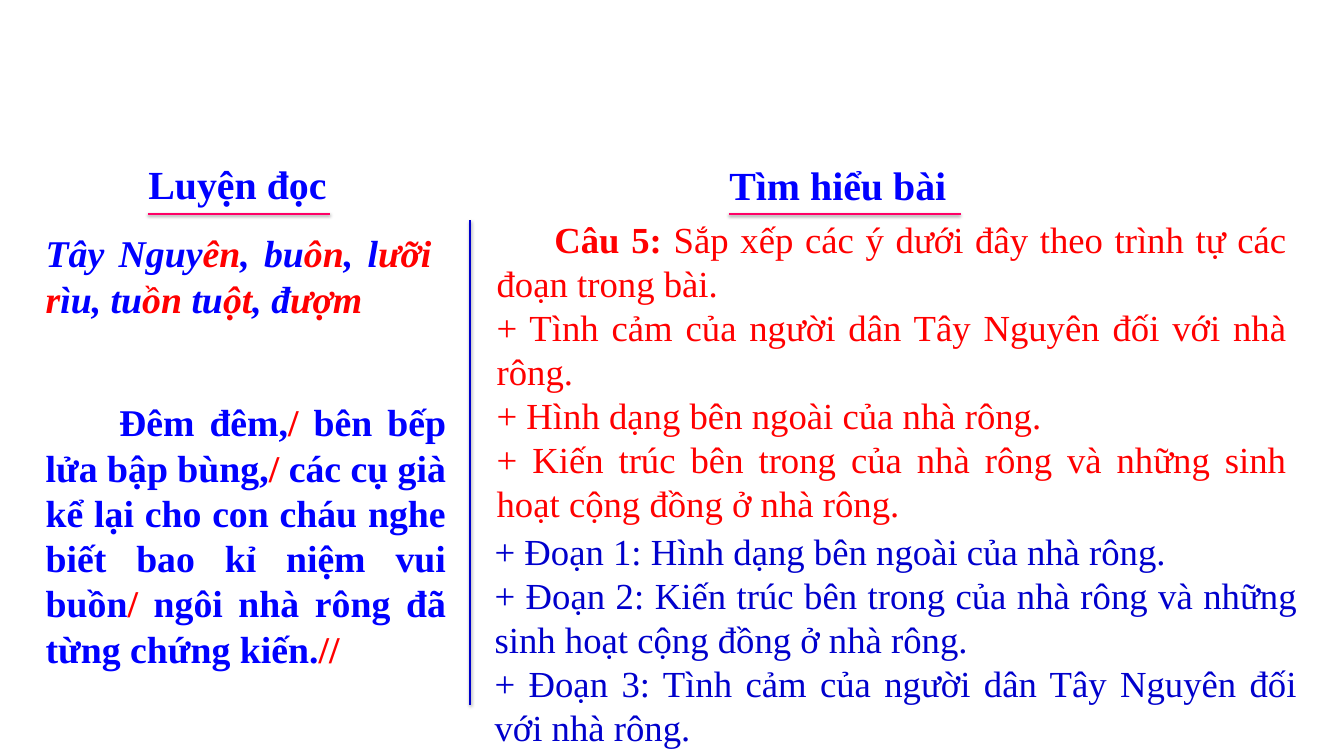
from itertools import cycle

from lxml.etree import SubElement
from pptx import Presentation
from pptx.dml.color import RGBColor
from pptx.enum.shapes import MSO_CONNECTOR
from pptx.enum.text import PP_ALIGN
from pptx.oxml.ns import qn
from pptx.util import Pt

BLUE = RGBColor(0x00, 0x00, 0xFF)
NAVY = RGBColor(0x00, 0x00, 0xCC)
RED = RGBColor(0xFF, 0x00, 0x00)
PINK = RGBColor(0xFF, 0x00, 0x66)
FONT = "Times New Roman"

WORDS = ["Tây Nguy", "ên", ", bu", "ôn", ", l", "ưỡi r", "ìu, tu", "ồn",
         " tu", "ột", ", đ", "ượm"]
PAUSES = ["Đêm đêm,", "/", " bên bếp lửa bập bùng,", "/",
          " các cụ già kể lại cho con cháu nghe biết bao kỉ niệm vui buồn",
          "/", " ngôi nhà rông đã từng chứng kiến.", "//"]
TASK = "Sắp xếp các ý dưới đây theo trình tự các đoạn trong bài."
IDEAS = ["+ Tình cảm của người dân Tây Nguyên đối với nhà rông.",
         "+ Hình dạng bên ngoài của nhà rông.",
         "+ Kiến trúc bên trong của nhà rông và những sinh hoạt cộng đồng "
         "ở nhà rông."]
ANSWERS = ["+ Đoạn 1: Hình dạng bên ngoài của nhà rông.",
           "+ Đoạn 2: Kiến trúc bên trong của nhà rông và những sinh hoạt "
           "cộng đồng ở nhà rông.",
           "+ Đoạn 3: Tình cảm của người dân Tây Nguyên đối với nhà rông."]


def add_line(slide, x1, y1, x2, y2, color):
    """Draw a straight line with a soft shadow below it."""
    line = slide.shapes.add_connector(
        MSO_CONNECTOR.STRAIGHT, Pt(x1), Pt(y1), Pt(x2), Pt(y2))
    line.line.color.rgb = color
    line.line.width = Pt(2)
    props = line.line._get_or_add_ln().getparent()
    effect = SubElement(props, qn("a:effectLst"))
    shade = SubElement(effect, qn("a:outerShdw"), blurRad=str(Pt(3.1)),
                       dist=str(Pt(1.6)), dir="5400000", rotWithShape="0")
    tone = SubElement(shade, qn("a:srgbClr"), val="000000")
    SubElement(tone, qn("a:alpha"), val="38000")


def add_box(slide, x, y, w, h, wrap=True):
    box = slide.shapes.add_textbox(Pt(x), Pt(y), Pt(w), Pt(h))
    box.text_frame.word_wrap = wrap
    return box.text_frame


def add_run(para, text, size, color, bold=False, italic=False):
    run = para.add_run()
    run.text = text
    font = run.font
    font.name, font.size = FONT, Pt(size)
    font.bold, font.italic = bold, italic
    font.color.rgb = color


def add_para(frame, runs, indent=0):
    """Add a justified paragraph; each run is (text, size, color, ...)."""
    first = frame.paragraphs[0]
    para = frame.add_paragraph() if first.runs else first
    para.alignment = PP_ALIGN.JUSTIFY
    if indent:
        props = para._p.get_or_add_pPr()
        props.set("marL", "0")
        props.set("indent", str(Pt(indent)))
    for run in runs:
        add_run(para, *run)


def add_head(slide, x, y, w, text, rule):
    """Place a heading with a rule of the given length under it."""
    frame = add_box(slide, x, y, w, 52, wrap=False)
    frame.margin_left = frame.margin_right = Pt(6)
    frame.margin_top = frame.margin_bottom = Pt(3)
    para = frame.paragraphs[0]
    para.alignment = PP_ALIGN.CENTER
    add_run(para, text, 38, BLUE, True)
    add_line(slide, x + 6, 204, x + 6 + rule, 204, PINK)


def add_reading(slide, x, y):
    add_head(slide, x + 98.5, y, 183, "Luyện đọc", 174)
    frame = add_box(slide, x, y + 67, 382, 94)
    add_para(frame, [(text, 36, color, True, True)
                     for text, color in zip(WORDS, cycle([BLUE, RED]))])
    frame = add_box(slide, x, y + 228, 396, 269)
    add_para(frame, [(text, 36, color, True)
                     for text, color in zip(PAUSES, cycle([BLUE, RED]))], 70)


def add_study(slide, x, y):
    add_head(slide, x + 224.5, y, 220, "Tìm hiểu bài", 221)
    frame = add_box(slide, x + 2, y + 52.5, 768, 312)
    add_para(frame, [("Câu 5: ", 35, RED, True), (TASK, 35, RED)], 55)
    for idea in IDEAS:
        add_para(frame, [(idea, 35, RED)])
    frame = add_box(slide, x, y + 350, 780, 225)
    for answer in ANSWERS:
        add_para(frame, [(answer, 35, NAVY)])


def main():
    deck = Presentation()
    deck.slide_width, deck.slide_height = Pt(1281.6), Pt(720)
    slide = deck.slides.add_slide(deck.slide_layouts[6])
    add_line(slide, 448.5, 210, 448.5, 672, NAVY)
    add_reading(slide, 36.5, 149)
    add_study(slide, 464.5, 150.5)
    deck.save("out.pptx")


if __name__ == "__main__":
    main()
